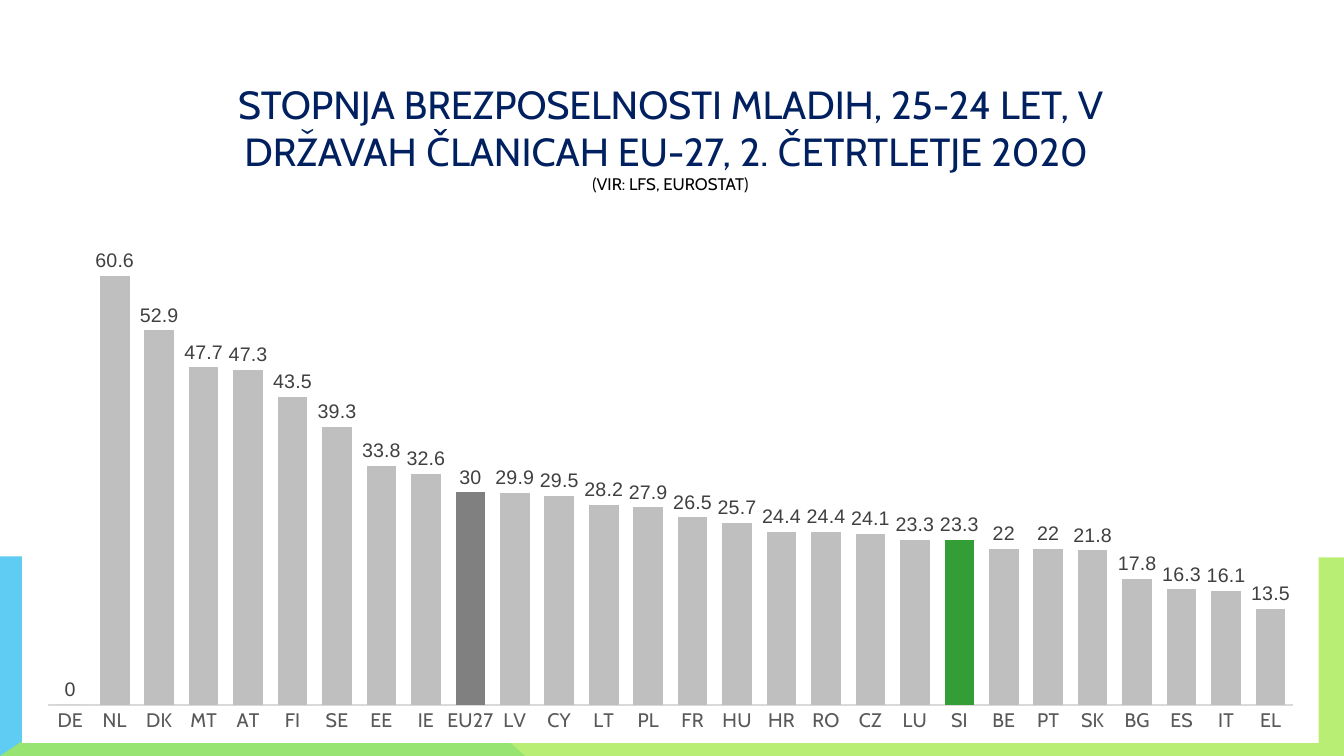
"""Build a slide that charts youth unemployment across the EU-27."""
from dataclasses import dataclass

from lxml.etree import SubElement
from pptx import Presentation
from pptx.chart.axis import CategoryAxis, ValueAxis
from pptx.chart.chart import Chart
from pptx.chart.data import CategoryChartData
from pptx.chart.series import BarSeries
from pptx.dml.color import RGBColor
from pptx.enum.chart import XL_CHART_TYPE, XL_LABEL_POSITION, XL_TICK_LABEL_POSITION, XL_TICK_MARK
from pptx.enum.text import MSO_ANCHOR, MSO_AUTO_SIZE, PP_ALIGN
from pptx.oxml import parse_xml
from pptx.oxml.ns import nsdecls, qn
from pptx.slide import Slide
from pptx.text.text import Font
from pptx.util import Emu, Inches, Pt


@dataclass(frozen=True)
class Theme:
    """Colours, fonts and type sizes."""
    title: str = "002060"
    source: str = "000000"
    background: str = "FFFFFF"
    blue: str = "5ECCF3"
    green: str = "A7EA52"
    bar: str = "BFBFBF"
    average: str = "808080"
    slovenia: str = "339E35"
    axis_text: str = "595959"
    axis_line: str = "D9D9D9"
    label: str = "404040"
    font: str = "Cabin"
    label_font: str = "Arial"
    title_size: int = 28
    chart_size: int = 14
    source_size: int = 12


@dataclass(frozen=True)
class Area:
    """A rectangle in percent of the slide's width and height."""
    left: float
    top: float
    width: float
    height: float

    def lengths(self) -> tuple[Emu, Emu, Emu, Emu]:
        """Give left, top, width and height as lengths."""
        return across(self.left), down(self.top), across(self.width), down(self.height)


@dataclass(frozen=True)
class Band:
    """A coloured outline with corners in percent of the slide."""
    corners: tuple[tuple[float, float], ...]
    color: str
    opacity: int = 100


THEME = Theme()
SLIDE_WIDTH, SLIDE_HEIGHT = Inches(13.33), Inches(7.5)
TITLE_AREA = Area(10.73, 7.73, 78.32, 20.8)
CHART_AREA = Area(1.65, 26.27, 96.47, 72)
PLOT_SHARES = {"x": 0.02, "y": 0.02, "w": 0.96, "h": 0.91}
BANDS = (
    Band(((0, 100), (0, 73.6), (22.36, 73.6), (39.08, 100)), THEME.blue),
    Band(((0, 100), (22.28, 73.6), (100, 73.73), (100, 100)), THEME.green, 80),
)
TITLE = "STOPNJA BREZPOSELNOSTI MLADIH, 25-24 LET, V DRŽAVAH ČLANICAH EU-27, 2. ČETRTLETJE 2020 "
SOURCE = "(VIR: LFS, EUROSTAT)"
RATES = {
    "DE": 0, "NL": 60.6, "DK": 52.9, "MT": 47.7, "AT": 47.3, "FI": 43.5, "SE": 39.3,
    "EE": 33.8, "IE": 32.6, "EU27": 30, "LV": 29.9, "CY": 29.5, "LT": 28.2, "PL": 27.9,
    "FR": 26.5, "HU": 25.7, "HR": 24.4, "RO": 24.4, "CZ": 24.1, "LU": 23.3, "SI": 23.3,
    "BE": 22, "PT": 22, "SK": 21.8, "BG": 17.8, "ES": 16.3, "IT": 16.1, "EL": 13.5,
}
HIGHLIGHTS = {"EU27": THEME.average, "SI": THEME.slovenia}


def across(percent: float) -> Emu:
    """Turn a percentage of the slide's width into a length."""
    return Emu(round(SLIDE_WIDTH * percent / 100))


def down(percent: float) -> Emu:
    """Turn a percentage of the slide's height into a length."""
    return Emu(round(SLIDE_HEIGHT * percent / 100))


def color_of(value: str) -> RGBColor:
    """Read a hexadecimal colour."""
    return RGBColor.from_string(value)


def format_font(font: Font, size: int, color: str, name: str = THEME.font) -> None:
    """Set the typeface, size and colour of a font."""
    font.name, font.size, font.bold = name, Pt(size), False
    font.color.rgb = color_of(color)


def draw_band(slide: Slide, band: Band) -> None:
    """Draw one decorative band at the foot of the slide."""
    start, *others = [(across(x), down(y)) for x, y in band.corners]
    builder = slide.shapes.build_freeform(*start)
    builder.add_line_segments(others, close=True)
    shape = builder.convert_to_shape()
    shape.shadow.inherit = False
    shape.line.fill.background()
    shape.fill.solid()
    shape.fill.fore_color.rgb = color_of(band.color)
    if band.opacity < 100:
        fill_color = shape.fill._xPr.find(f".//{qn('a:srgbClr')}")
        SubElement(fill_color, qn("a:alpha"), val=str(band.opacity * 1000))


def write_title(slide: Slide) -> None:
    """Place and format the title with its source line."""
    title = slide.shapes.title
    title.left, title.top, title.width, title.height = TITLE_AREA.lengths()
    frame = title.text_frame
    frame.word_wrap, frame.auto_size = True, MSO_AUTO_SIZE.NONE
    frame.vertical_anchor = MSO_ANCHOR.MIDDLE
    paragraph = frame.paragraphs[0]
    paragraph.text = f"{TITLE}\v{SOURCE}"
    paragraph.alignment = PP_ALIGN.CENTER
    heading, source = paragraph.runs
    format_font(heading.font, THEME.title_size, THEME.title)
    format_font(source.font, THEME.source_size, THEME.source)


def fill_chart_area(chart: Chart) -> None:
    """Give the chart its background and fix the place of its plot."""
    space = chart._chartSpace
    space.chart.addnext(parse_xml(
        f'<c:spPr {nsdecls("c", "a")}><a:solidFill><a:srgbClr val="{THEME.background}"/>'
        "</a:solidFill><a:ln><a:noFill/></a:ln></c:spPr>"))
    plot_area = space.chart.plotArea
    for old in plot_area.findall(qn("c:layout")):
        plot_area.remove(old)
    modes = '<c:layoutTarget val="inner"/><c:xMode val="edge"/><c:yMode val="edge"/>'
    shares = "".join(f'<c:{key} val="{share}"/>' for key, share in PLOT_SHARES.items())
    plot_area.insert(0, parse_xml(
        f'<c:layout {nsdecls("c")}><c:manualLayout>{modes}{shares}</c:manualLayout></c:layout>'))


def format_axes(category_axis: CategoryAxis, value_axis: ValueAxis) -> None:
    """Show the country axis and hide the value axis."""
    for axis in (category_axis, value_axis):
        axis.major_tick_mark = axis.minor_tick_mark = XL_TICK_MARK.NONE
        axis.has_major_gridlines = False
    format_font(category_axis.tick_labels.font, THEME.chart_size, THEME.axis_text)
    category_axis.format.line.color.rgb = color_of(THEME.axis_line)
    category_axis.format.line.width = Pt(1.5)
    value_axis.minimum_scale, value_axis.maximum_scale = 0, 70
    value_axis.tick_label_position = XL_TICK_LABEL_POSITION.NONE
    value_axis.format.line.fill.background()


def color_bars(series: BarSeries) -> None:
    """Colour the bars and pick out the highlighted ones."""
    series.format.fill.solid()
    series.format.fill.fore_color.rgb = color_of(THEME.bar)
    for country, color in HIGHLIGHTS.items():
        fill = series.points[list(RATES).index(country)].format.fill
        fill.solid()
        fill.fore_color.rgb = color_of(color)


def draw_chart(slide: Slide) -> None:
    """Draw the column chart of unemployment rates."""
    data = CategoryChartData()
    data.categories = list(RATES)
    data.add_series("Series 1", list(RATES.values()))
    chart = slide.shapes.add_chart(XL_CHART_TYPE.COLUMN_CLUSTERED, *CHART_AREA.lengths(), data).chart
    chart.has_legend = chart.has_title = False
    format_font(chart.font, THEME.chart_size, THEME.source)
    fill_chart_area(chart)
    format_axes(chart.category_axis, chart.value_axis)
    plot = chart.plots[0]
    plot.gap_width, plot.overlap, plot.vary_by_categories = 50, -27, False
    color_bars(plot.series[0])
    labels = plot.series[0].data_labels
    labels.show_value, labels.position = True, XL_LABEL_POSITION.OUTSIDE_END
    labels.number_format, labels.number_format_is_linked = "General", False
    format_font(labels.font, THEME.chart_size, THEME.label, THEME.label_font)


def main() -> None:
    """Build and save the presentation."""
    presentation = Presentation()
    presentation.slide_width, presentation.slide_height = SLIDE_WIDTH, SLIDE_HEIGHT
    slide = presentation.slides.add_slide(presentation.slide_layouts[5])
    for band in BANDS:
        draw_band(slide, band)
    write_title(slide)
    draw_chart(slide)
    presentation.save("out.pptx")


if __name__ == "__main__":
    main()
